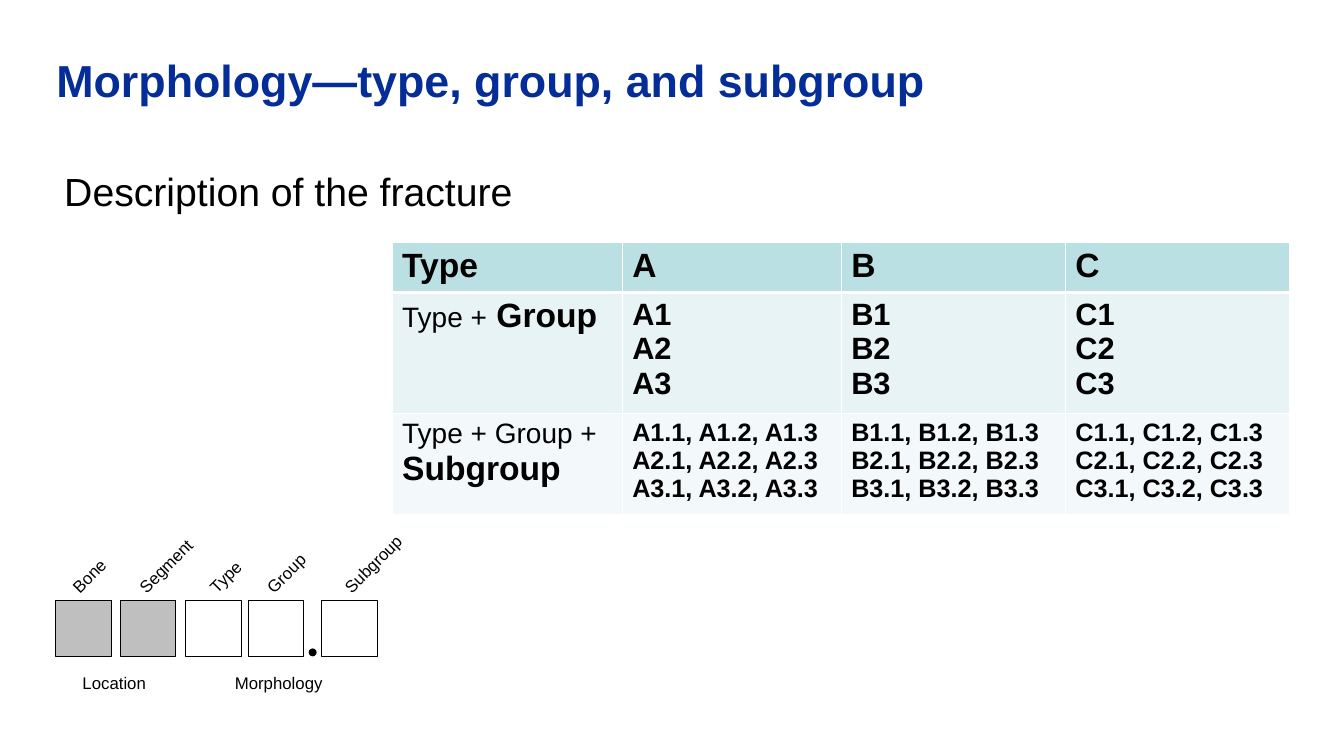
from lxml import etree
from pptx import Presentation
from pptx.dml.color import RGBColor
from pptx.enum.shapes import MSO_SHAPE as SHAPE
from pptx.enum.text import MSO_AUTO_SIZE as AUTO_SIZE
from pptx.oxml import parse_xml
from pptx.util import Cm, Pt

NAMESPACE = "http://schemas.openxmlformats.org/drawingml/2006/main"


def color(value):
    return RGBColor.from_string(value)


def add_text(shapes, text, left, top, width, height, size, value="000000", bold=False):
    box = shapes.add_textbox(Cm(left), Cm(top), Cm(width), Cm(height))
    box.text_frame.text = text
    font = box.text_frame.paragraphs[0].runs[0].font
    font.name, font.size, font.bold = "Arial", Pt(size), bold
    font.color.rgb = color(value)
    return box


presentation = Presentation()
presentation.slide_width, presentation.slide_height = Cm(33.87), Cm(19.05)
slide = presentation.slides.add_slide(presentation.slide_layouts[6])

title = add_text(slide.shapes, "Morphology—type, group, and subgroup",
                 1.42, 1.47, 31.04, 1.9, 32, "042D98", True)
title.text_frame.paragraphs[0].line_spacing = 0.9
body = add_text(slide.shapes, "Description of the fracture", 1.42, 4.22, 28.07, 12.5, 28)
body_paragraph = body.text_frame.paragraphs[0]
body_paragraph.space_after = Pt(6)
properties = body_paragraph._p.get_or_add_pPr()
properties.set("marL", str(Cm(1.47)))
properties.set("indent", str(Cm(-1.27)))
for box in (title, body):
    frame = box.text_frame
    frame.word_wrap = True
    frame.margin_left = frame.margin_right = frame.margin_top = frame.margin_bottom = 0

types = "ABC"
numbers = (1, 2, 3)
rows = [
    [[[("Type", 24, True)]]] + [[[(letter, 24, True)]] for letter in types],
    [[[("Type +", 20, False), (" Group", 24, True)]]]
    + [[[(f"{letter}{group}", 22, True)] for group in numbers] for letter in types],
    [[[("Type + Group + ", 20, False), ("Subgroup", 24, True)]]]
    + [[[(", ".join(f"{letter}{group}.{sub}" for sub in numbers), 18, True)]
        for group in numbers] for letter in types],
]
column_widths = (5.8, 5.52, 5.65, 5.65)
row_heights = (1.17, 2.88, 2.38)
row_fills = ("BBE0E3", "E7F3F4", "F3F9FA")
row_borders = ((1, 3), (3, 1), (1, 1))

table = slide.shapes.add_table(3, 4, Cm(9.88), Cm(6.1),
                               Cm(sum(column_widths)), Cm(sum(row_heights))).table
table.horz_banding = False
for column, width in zip(table.columns, column_widths):
    column.width = Cm(width)
for row_index, row in enumerate(rows):
    table.rows[row_index].height = Cm(row_heights[row_index])
    top_border, bottom_border = row_borders[row_index]
    for column_index, paragraphs in enumerate(row):
        cell = table.cell(row_index, column_index)
        cell_properties = cell._tc.get_or_add_tcPr()
        for side, points in zip("LRTB", (1, 1, top_border, bottom_border)):
            cell_properties.append(parse_xml(
                f'<a:ln{side} xmlns:a="{NAMESPACE}" w="{Pt(points)}"><a:solidFill>'
                f'<a:srgbClr val="FFFFFF"/></a:solidFill></a:ln{side}>'))
        cell.fill.solid()
        cell.fill.fore_color.rgb = color(row_fills[row_index])
        frame = cell.text_frame
        for index, runs in enumerate(paragraphs):
            paragraph = frame.add_paragraph() if index else frame.paragraphs[0]
            for text, size, bold in runs:
                run = paragraph.add_run()
                run.text = text
                run.font.name, run.font.size, run.font.bold = "Arial", Pt(size), bold
                run.font.color.rgb = color("000000")

code_shapes = slide.shapes.add_group_shape().shapes
for left, fill in ((1.41, "BFBFBF"), (3.03, "BFBFBF"), (4.68, None), (6.26, None), (8.11, None)):
    square = code_shapes.add_shape(SHAPE.RECTANGLE, Cm(left), Cm(15.14), Cm(1.4), Cm(1.4))
    square.shadow.inherit = False
    if fill:
        square.fill.solid()
        square.fill.fore_color.rgb = color(fill)
    else:
        square.fill.background()
    square.line.color.rgb = color("000000")
    square.line.width = Pt(0.75)

dot = code_shapes.add_shape(SHAPE.OVAL, Cm(7.78), Cm(16.34), Cm(0.2), Cm(0.2))
dot.shadow.inherit = False
dot.fill.solid()
dot.fill.fore_color.rgb = color("000000")
dot.line.fill.background()

labels = (
    ("Bone", 1.5, 14.12, 1.5, 315),
    ("Segment", 3.08, 13.87, 2.21, 315),
    ("Type", 4.97, 14.14, 1.45, 315),
    ("Group", 6.37, 14.05, 1.7, 315),
    ("Subgroup", 8.23, 13.82, 2.36, 315),
    ("Location", 1.83, 16.82, 2.11, 0),
    ("Morphology", 5.67, 16.82, 2.74, 0),
)
for text, left, top, width, rotation in labels:
    label = add_text(code_shapes, text, left, top, width, 0.77, 12)
    label.rotation = rotation
    label.text_frame.word_wrap = False
    label.text_frame.auto_size = AUTO_SIZE.SHAPE_TO_FIT_TEXT

presentation.save("out.pptx")
